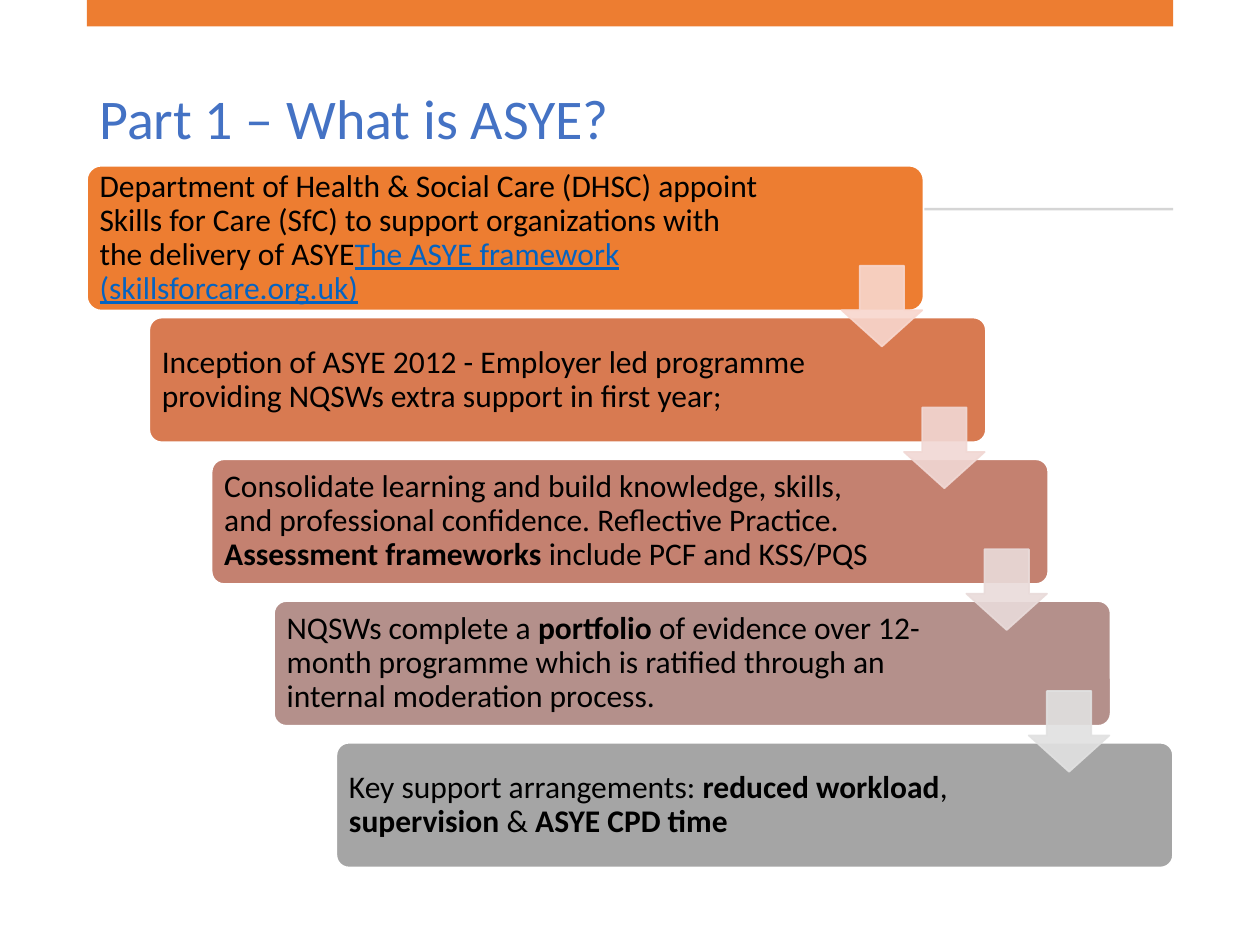
from lxml import etree
from pptx import Presentation
from pptx.dml.color import RGBColor
from pptx.enum.shapes import MSO_SHAPE
from pptx.enum.text import MSO_ANCHOR
from pptx.oxml.ns import qn
from pptx.util import Inches, Pt

COLORS = {
    "title": "4472C4", "bar": "ED7D31", "rule": "D5D5D5",
    "text": "000000", "link": "0563C1", "outline": "FFFFFF",
}

# Each step: card colour, colour of the arrow to the next step, (text, style) runs
STEPS = [
    ("ED7D31", "F8D7CE", [
        ("Department of Health & Social Care (DHSC) appoint Skills for Care (SfC) "
         "to support organizations with the delivery of ASYE", ""),
        ("The ASYE framework (skillsforcare.org.uk)", "link")]),
    ("D87A51", "F1D8D4", [
        ("Inception of ASYE 2012 - Employer led programme providing NQSWs "
         "extra support in first year;", "")]),
    ("C48170", "E9DBDA", [
        ("Consolidate learning and build knowledge, skills, and professional "
         "confidence. Reflective Practice. ", ""),
        ("Assessment frameworks ", "bold"),
        ("include PCF and KSS/PQS", "")]),
    ("B4908B", "E1E1E1", [
        ("NQSWs complete a ", ""),
        ("portfolio", "bold"),
        (" of evidence over 12-month programme which is ratified through an "
         "internal moderation process.", "")]),
    ("A5A5A5", None, [
        ("Key support arrangements: ", ""),
        ("reduced workload", "bold"),
        (", ", ""),
        ("supervision", "bold"),
        (" & ", ""),
        ("ASYE CPD time", "bold")]),
]

LEFT, WIDTH = 0.69, 8.62
STEP_X, STEP_Y = 0.495, 1.125
CARD_WIDTH, CARD_HEIGHT, FIRST_HEIGHT = 6.64, 0.99, 1.15
FIRST_CENTER = 1.89
ARROW_SIZE = 0.64

deck = Presentation()
deck.slide_width, deck.slide_height = Inches(10), Inches(7.5)
page = deck.slides.add_slide(deck.slide_layouts[6])


def add_filled(kind, left, top, width, height, fill, outline=None):
    shape = page.shapes.add_shape(
        kind, Inches(left), Inches(top), Inches(width), Inches(height))
    shape.shadow.inherit = False
    shape.fill.solid()
    shape.fill.fore_color.rgb = RGBColor.from_string(fill)
    if outline:
        shape.line.color.rgb = RGBColor.from_string(outline)
        shape.line.width = Pt(1)
    else:
        shape.line.fill.background()
    return shape


def add_text(left, top, width, height, runs, size, color, inset):
    box = page.shapes.add_textbox(
        Inches(left), Inches(top), Inches(width), Inches(height))
    frame = box.text_frame
    frame.word_wrap = True
    frame.vertical_anchor = MSO_ANCHOR.MIDDLE
    frame.margin_left = frame.margin_right = Inches(inset)
    frame.margin_top = frame.margin_bottom = Inches(min(inset, 0.07))
    para = frame.paragraphs[0]
    para.line_spacing = 0.9
    for text, style in runs:
        span = para.add_run()
        span.text = text
        span.font.name = "Calibri"
        span.font.size = Pt(size)
        span.font.bold = style == "bold"
        span.font.underline = style == "link"
        span.font.color.rgb = RGBColor.from_string(
            COLORS["link"] if style == "link" else color)


# Title, top bar and rule
add_text(LEFT, 0.37, WIDTH, 1.18, [("Part 1 – What is ASYE?", "")],
         32, COLORS["title"], 0.1)
add_filled(MSO_SHAPE.RECTANGLE, LEFT, 0, WIDTH, 0.21, COLORS["bar"])
add_filled(MSO_SHAPE.RECTANGLE, LEFT, 1.65, WIDTH, 0.02, COLORS["rule"])

# Staircase of cards, the first one taller
for index, (fill, _, runs) in enumerate(STEPS):
    height = CARD_HEIGHT if index else FIRST_HEIGHT
    left = LEFT + index * STEP_X
    top = FIRST_CENTER + index * STEP_Y - height / 2
    card = add_filled(MSO_SHAPE.ROUNDED_RECTANGLE, left, top,
                      CARD_WIDTH, height, fill, COLORS["outline"])
    card.adjustments[0] = 0.1
    add_text(left + 0.03, top + 0.03, 5.44, height - 0.06, runs,
             18, COLORS["text"], 0.07)

# Translucent arrows from each card to the next
for index, (_, tint, _) in enumerate(STEPS[:-1]):
    arrow = add_filled(MSO_SHAPE.DOWN_ARROW, 6.68 + index * STEP_X,
                       2.11 + index * STEP_Y, ARROW_SIZE, ARROW_SIZE, tint, tint)
    arrow.adjustments[0] = 0.55
    arrow.adjustments[1] = 0.45
    for color in arrow.element.spPr.iter(qn("a:srgbClr")):
        etree.SubElement(color, qn("a:alpha"), val="90000")

deck.save("out.pptx")
